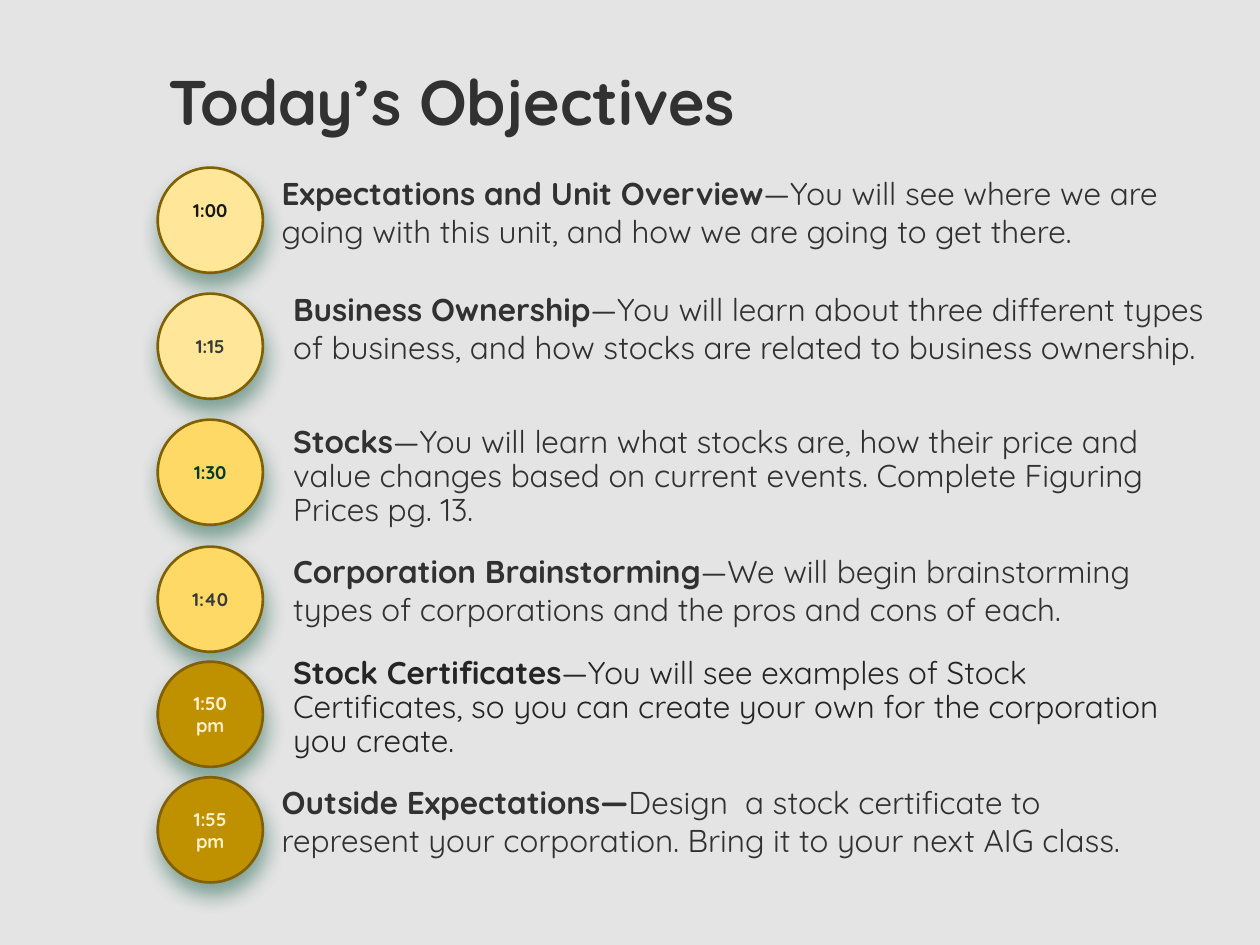
"""Build the slide of today's objectives with a time for each one."""
import pptx
import pptx.dml.color
import pptx.enum.shapes
import pptx.enum.text
import pptx.oxml
import pptx.oxml.ns
import pptx.util
from pptx.util import Cm, Pt

COLORS = {
    "background": "E4E4E4", "text": "313131", "dark": "252525",
    "black": "181818", "gray": "393939", "green": "013B28",
    "cream": "FFF2CC", "pale": "FFE699", "yellow": "FFD966",
    "gold": "BF9000", "outline": "806000", "shadow": "024E35",
}
FONT = "Quicksand"
TITLE = "Today’s Objectives"
NEAR, FAR = 5.28, 5.51
NARROW, WIDE = 18.42, 19.25
CIRCLE_LEFT, CIRCLE_SIZE = 3.18, 2.12

OBJECTIVES = [
    dict(time="1:00", fill="pale", time_color="black", circle_top=3.38, raised=0.38,
         name="Expectations and Unit Overview",
         detail="—You will see where we are going with this unit, and how we are going to get there.",
         box=(NEAR, 3.38, WIDE, 2.33)),
    dict(time="1:15", fill="pale", time_color="gray", circle_top=5.92,
         name="Business Ownership",
         detail="—You will learn about three different types of business, and how stocks are related to business ownership.",
         box=(FAR, 5.72, WIDE, 2.75)),
    dict(time="1:30", fill="yellow", time_color="green", circle_top=8.46, spacing=0.9,
         name="Stocks",
         detail="—You will learn what stocks are, how their price and value changes based on current events. Complete Figuring Prices pg. 13.",
         box=(FAR, 8.46, NARROW, 2.33)),
    dict(time="1:40", fill="yellow", time_color="gray", circle_top=11.02,
         name="Corporation Brainstorming",
         detail="—We will begin brainstorming types of corporations and the pros and cons of each.",
         box=(FAR, 11, WIDE, 2.33)),
    dict(time="1:50\npm", fill="gold", time_color="cream", circle_top=13.34,
         spacing=0.9, color="dark",
         name="Stock Certificates",
         detail="—You will see examples of Stock Certificates, so you can create your own for the corporation you create.",
         box=(FAR, 13.13, NARROW, 2.33)),
    dict(time="1:55\npm", fill="gold", time_color="cream", circle_top=15.67,
         name="Outside Expectations—",
         detail="Design  a stock certificate to represent your corporation. Bring it to your next AIG class.",
         box=(NEAR, 15.67, NARROW, 2.54)),
]


def rgb(name):
    return pptx.dml.color.RGBColor.from_string(COLORS[name])


def write(paragraph, text, size=18, color="text", bold=False):
    for index, line in enumerate(text.split("\n")):
        if index:
            paragraph.add_line_break()
        run = paragraph.add_run()
        run.text = line
        run.font.name = FONT
        run.font.size = Pt(size)
        run.font.bold = bold
        run.font.color.rgb = rgb(color)


def add_box(slide, box):
    frame = slide.shapes.add_textbox(*map(Cm, box)).text_frame
    frame.word_wrap = True
    return frame


def add_shadow(shape):
    shape.shadow.inherit = False
    effects = shape._element.spPr.find(pptx.oxml.ns.qn("a:effectLst"))
    effects.append(pptx.oxml.parse_xml(
        f'<a:outerShdw {pptx.oxml.ns.nsdecls("a")} blurRad="{Pt(12)}" dist="{Pt(7)}" '
        f'dir="{79 * 60000}" algn="tl" rotWithShape="0"><a:srgbClr val="{COLORS["shadow"]}">'
        '<a:alpha val="45000"/></a:srgbClr></a:outerShdw>'))


def add_time(slide, objective):
    circle = slide.shapes.add_shape(
        pptx.enum.shapes.MSO_SHAPE.OVAL, Cm(CIRCLE_LEFT), Cm(objective["circle_top"]),
        Cm(CIRCLE_SIZE), Cm(CIRCLE_SIZE))
    circle.fill.solid()
    circle.fill.fore_color.rgb = rgb(objective["fill"])
    circle.line.color.rgb = rgb("outline")
    circle.line.width = Pt(1.5)
    add_shadow(circle)
    frame = circle.text_frame
    frame.vertical_anchor = pptx.enum.text.MSO_ANCHOR.MIDDLE
    frame.margin_bottom = Cm(0.13 + objective.get("raised", 0))
    frame.paragraphs[0].alignment = pptx.enum.text.PP_ALIGN.CENTER
    write(frame.paragraphs[0], objective["time"], size=10.5,
          color=objective["time_color"], bold=True)


def add_objective(slide, objective):
    paragraph = add_box(slide, objective["box"]).paragraphs[0]
    paragraph._p.get_or_add_pPr().set("marL", str(Cm(0.15)))
    paragraph.line_spacing = objective.get("spacing", 1.0)
    color = objective.get("color", "text")
    write(paragraph, objective["name"], color=color, bold=True)
    write(paragraph, objective["detail"], color=color)


def main():
    deck = pptx.Presentation()
    deck.slide_width, deck.slide_height = Cm(25.4), Cm(19.05)
    slide = deck.slides.add_slide(deck.slide_layouts[6])
    slide.background.fill.solid()
    slide.background.fill.fore_color.rgb = rgb("background")
    title = add_box(slide, (3.15, 1.14, 21.18, 1.78))
    title.vertical_anchor = pptx.enum.text.MSO_ANCHOR.MIDDLE
    write(title.paragraphs[0], TITLE, size=36, bold=True)
    for objective in OBJECTIVES:
        add_time(slide, objective)
        add_objective(slide, objective)
    deck.save("out.pptx")


if __name__ == "__main__":
    main()
